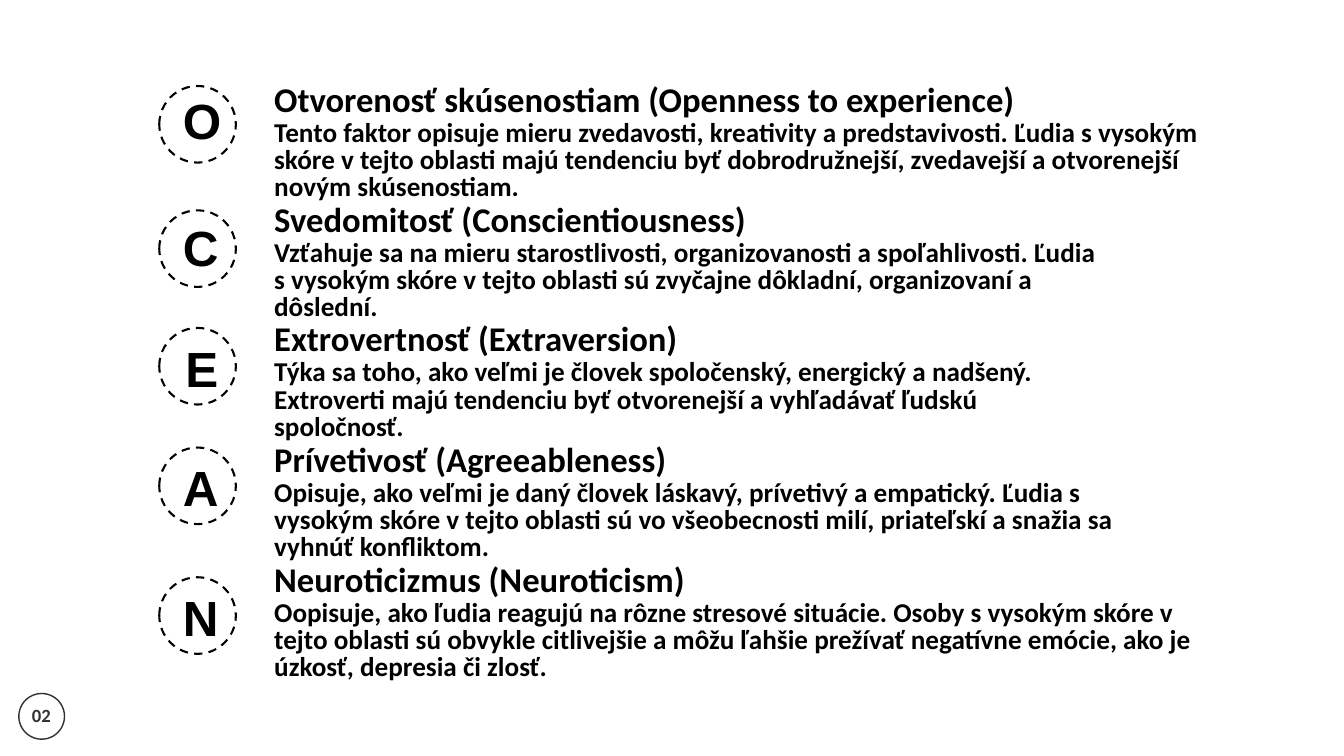
import pptx
import pptx.util
import pptx.dml.color
import pptx.enum.dml
import pptx.enum.shapes
import pptx.enum.text

COLORS = {"paper": "FFFFFF", "ink": "000000", "badge": "323232"}
PX = 9144
PAGE_NUMBER = "02"
FACTORS = [
    {"letter": "O", "letter_at": (272, 120), "circle_top": 128, "width": 1405,
     "heading": "Otvorenosť skúsenostiam (Openness to experience)",
     "description": "Tento faktor opisuje mieru zvedavosti, kreativity a predstavivosti. "
                    "Ľudia s vysokým skóre v tejto oblasti majú tendenciu byť dobrodružnejší, "
                    "zvedavejší a otvorenejší novým skúsenostiam."},
    {"letter": "C", "letter_at": (272, 309), "circle_top": 313, "width": 1246,
     "heading": "Svedomitosť (Conscientiousness)",
     "description": "Vzťahuje sa na mieru starostlivosti, organizovanosti a spoľahlivosti. "
                    "Ľudia s vysokým skóre v tejto oblasti sú zvyčajne dôkladní, "
                    "organizovaní a dôslední."},
    {"letter": "E", "letter_at": (276, 488), "circle_top": 488, "width": 1246,
     "heading": "Extrovertnosť (Extraversion)",
     "description": "Týka sa toho, ako veľmi je človek spoločenský, energický a nadšený. "
                    "Extroverti majú tendenciu byť otvorenejší a vyhľadávať ľudskú spoločnosť."},
    {"letter": "A", "letter_at": (272, 666), "circle_top": 666, "width": 1271,
     "heading": "Prívetivosť (Agreeableness)",
     "description": "Opisuje, ako veľmi je daný človek láskavý, prívetivý a empatický. "
                    "Ľudia s vysokým skóre v tejto oblasti sú vo všeobecnosti milí, "
                    "priateľskí a snažia sa vyhnúť konfliktom."},
    {"letter": "N", "letter_at": (272, 859), "circle_top": 859, "width": 1405,
     "heading": "Neuroticizmus (Neuroticism)",
     "description": "Oopisuje, ako ľudia reagujú na rôzne stresové situácie. Osoby s vysokým "
                    "skóre v tejto oblasti sú obvykle citlivejšie a môžu ľahšie prežívať "
                    "negatívne emócie, ako je úzkosť, depresia či zlosť."},
]
TEXT_LEFT, FIRST_TOP, STEP = 408, 105, 178.75


def rgb(name):
    return pptx.dml.color.RGBColor.from_string(COLORS[name])


def emu(*lengths):
    return [length * PX for length in lengths]


def add_text(slide, text, left, top, width, height, size, spacing, font="Calibri",
             color="ink", inset=0, centered=False):
    box = slide.shapes.add_textbox(*emu(left, top, width, height))
    frame = box.text_frame
    frame.word_wrap = True
    frame.margin_left = frame.margin_right = inset * PX
    frame.margin_top = frame.margin_bottom = inset * PX
    paragraph = frame.paragraphs[0]
    if centered:
        frame.vertical_anchor = pptx.enum.text.MSO_ANCHOR.MIDDLE
        paragraph.alignment = pptx.enum.text.PP_ALIGN.CENTER
    else:
        frame.auto_size = pptx.enum.text.MSO_AUTO_SIZE.SHAPE_TO_FIT_TEXT
    paragraph.line_spacing = pptx.util.Pt(spacing)
    run = paragraph.add_run()
    run.text = text
    run.font.name = font
    run.font.size = pptx.util.Pt(size)
    run.font.bold = True
    run.font.color.rgb = rgb(color)


def add_circle(slide, left, top, diameter, color, weight, fill=None, dash=None):
    circle = slide.shapes.add_shape(pptx.enum.shapes.MSO_SHAPE.OVAL,
                                    *emu(left, top, diameter, diameter))
    circle.shadow.inherit = False
    if fill:
        circle.fill.solid()
        circle.fill.fore_color.rgb = rgb(fill)
    else:
        circle.fill.background()
    circle.line.color.rgb = rgb(color)
    circle.line.width = pptx.util.Pt(weight)
    if dash:
        circle.line.dash_style = dash


def main():
    deck = pptx.Presentation()
    deck.slide_width, deck.slide_height = emu(2000, 1125)
    slide = deck.slides.add_slide(deck.slide_layouts[6])
    slide.background.fill.solid()
    slide.background.fill.fore_color.rgb = rgb("paper")

    add_circle(slide, 28, 1032, 68, "badge", 1.5, fill="paper")
    add_text(slide, PAGE_NUMBER, 34, 1040, 55, 53, size=20, spacing=20.8,
             color="badge", inset=6, centered=True)

    for index, factor in enumerate(FACTORS):
        top = round(FIRST_TOP + index * STEP)
        add_circle(slide, 237, factor["circle_top"], 114, "ink", 2.25,
                   dash=pptx.enum.dml.MSO_LINE.DASH)
        add_text(slide, factor["heading"], TEXT_LEFT, top, 1271, 69,
                 size=37.1, spacing=51.9)
        add_text(slide, factor["description"], TEXT_LEFT, top + 74, factor["width"], 119,
                 size=29.1, spacing=29.1)
        add_text(slide, factor["letter"], *factor["letter_at"], 45, 99,
                 size=52.9, spacing=74.1, font="Arial")

    deck.save("out.pptx")


if __name__ == "__main__":
    main()
